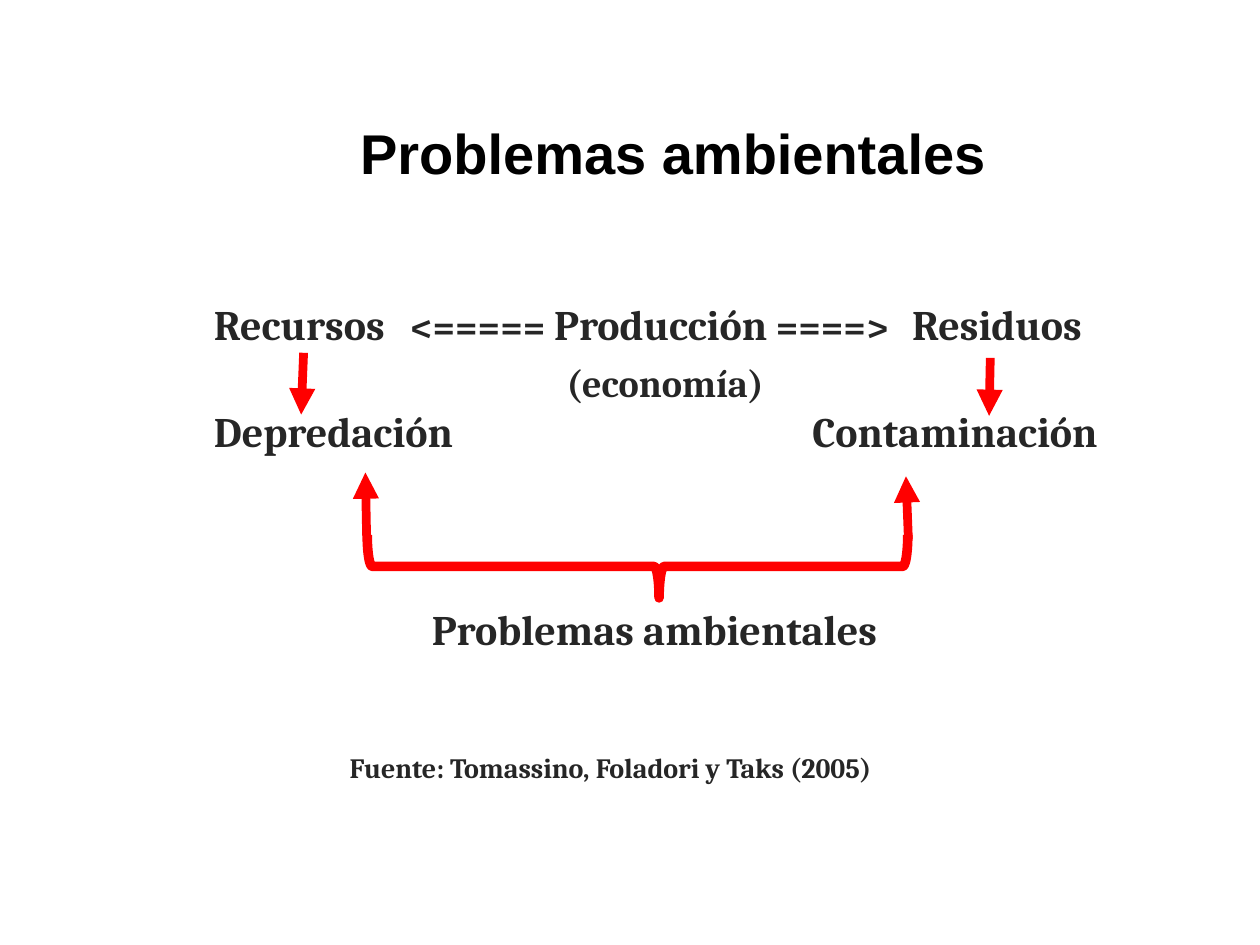
from lxml.etree import SubElement
from pptx import Presentation
from pptx.dml.color import RGBColor
from pptx.enum.shapes import MSO_CONNECTOR, MSO_SHAPE
from pptx.oxml.ns import qn
from pptx.util import Pt


def color(value):
    return RGBColor.from_string(value)


RED = "FF0000"

deck = Presentation()
deck.slide_width, deck.slide_height = Pt(720), Pt(540)
slide = deck.slides.add_slide(deck.slide_layouts[6])

# Scheme text: space before, indent, tab stops, runs with their sizes
lines = [
    (0, 0, [112, 399], [("Recursos", 24), ("\t<===== ", 21.8), ("Producción", 24),
                        (" ====>\t", 21.8), ("Residuos", 24)]),
    (6, 201.5, [], [("(economía)", 21.8)]),
    (0, 0, [342], [("Depredación\tContaminación", 24)]),
    (84.5, 124.5, [], [("Problemas ambientales", 24)]),
    (55.5, 77.5, [], [("Fuente: Tomassino, Foladori y Taks (2005)", 16)]),
]
scheme = slide.shapes.add_textbox(Pt(115.2), Pt(167), Pt(544.3), Pt(299)).text_frame
scheme.word_wrap = True
for index, (before, indent, tabs, pieces) in enumerate(lines):
    line = scheme.add_paragraph() if index else scheme.paragraphs[0]
    properties = line._p.get_or_add_pPr()
    properties.set("marL", str(Pt(indent)))
    if tabs:
        tab_list = SubElement(properties, qn("a:tabLst"))
        for stop in tabs:
            SubElement(tab_list, qn("a:tab"), pos=str(Pt(stop)), algn="l")
    if before:
        line.space_before = Pt(before)
    for words, size in pieces:
        run = line.add_run()
        run.text = words
        run.font.name, run.font.size, run.font.bold = "Cambria", Pt(size), True
        run.font.color.rgb = color("262626")

# Arrows: down to the effects, up from the brace
arrows = [
    (173.5, 201.6, 172.1, 236.9),
    (565.9, 204.5, 565.2, 237.6),
    (209.5, 306, 208.8, 270),
    (519.1, 308.2, 517.7, 272.2),
]
for ends in arrows:
    arrow = slide.shapes.add_connector(MSO_CONNECTOR.STRAIGHT, *map(Pt, ends))
    arrow.line.color.rgb = color(RED)
    arrow.line.width = Pt(5)
    SubElement(arrow.line._get_or_add_ln(), qn("a:tailEnd"), type="triangle")
    SubElement(arrow._element.spPr, qn("a:effectLst"))

# Title
title = slide.shapes.add_textbox(Pt(198.7), Pt(64), Pt(406), Pt(46)).text_frame
title.word_wrap = True
title.text = "Problemas ambientales"
title_font = title.paragraphs[0].runs[0].font
title_font.name, title_font.size, title_font.bold = "Arial", Pt(32), True
title_font.color.rgb = color("000000")

# Brace joining both effects
brace = slide.shapes.add_shape(MSO_SHAPE.LEFT_BRACE, Pt(346.3), Pt(169.2), Pt(36), Pt(308.9))
brace.rotation = 270
brace.adjustments[0], brace.adjustments[1] = 0.08, 0.54
brace.shadow.inherit = False
brace.fill.background()
brace.line.color.rgb = color(RED)
brace.line.width = Pt(5.5)

deck.save("out.pptx")
